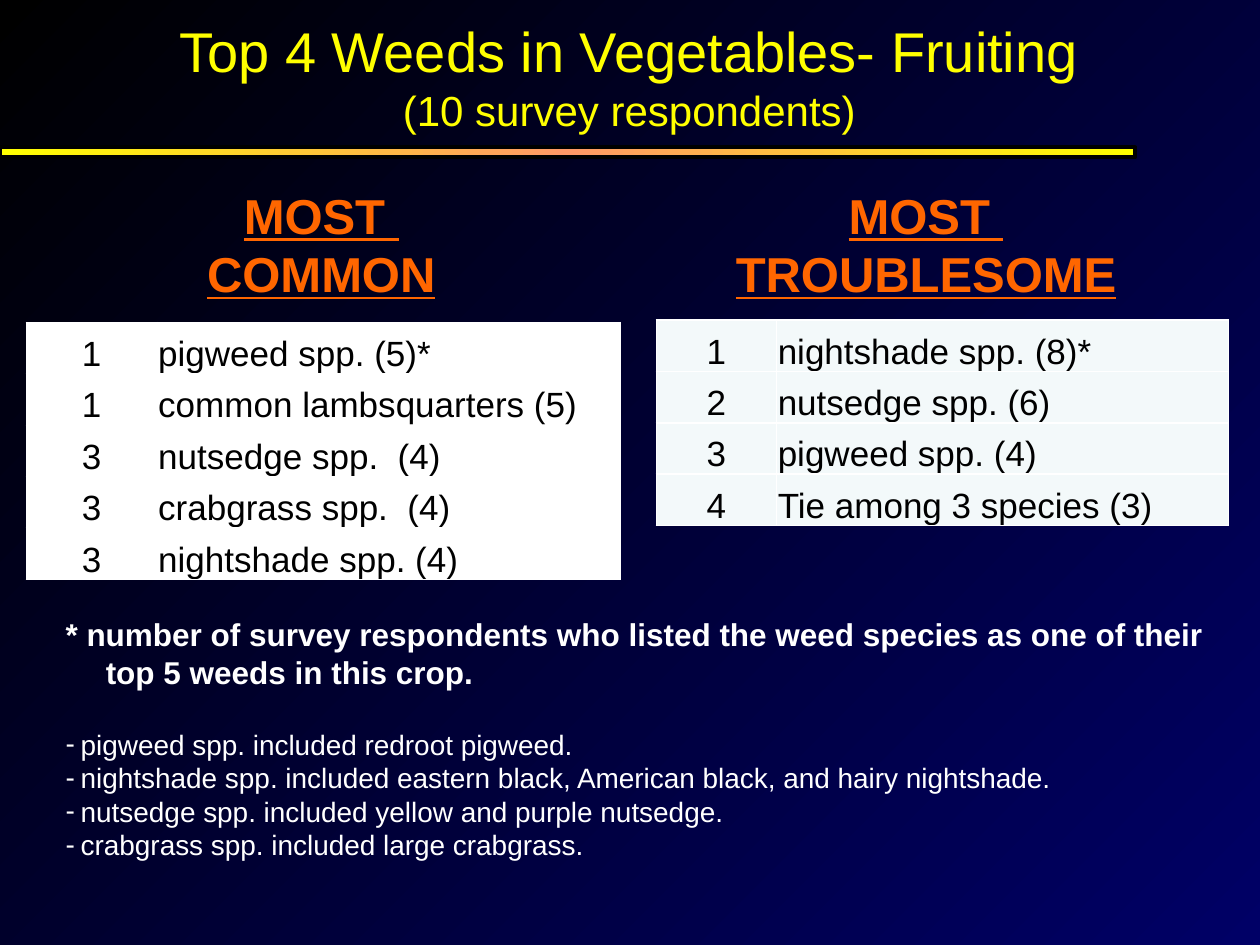
import pptx
import pptx.dml.color
import pptx.enum.text
import pptx.oxml
import pptx.oxml.ns
import pptx.util
from lxml import etree

ALIGN = pptx.enum.text.PP_ALIGN
ANCHOR = pptx.enum.text.MSO_ANCHOR
qn = pptx.oxml.ns.qn

deck = pptx.Presentation()
deck.slide_width = pptx.util.Inches(10)
deck.slide_height = pptx.util.Inches(7.5)


def area(left, top, width, height):
    """Turn percentages of the slide's size into a box in EMU."""
    across, down = deck.slide_width / 100, deck.slide_height / 100
    return (round(left * across), round(top * down),
            round(width * across), round(height * down))


def move(shape, box):
    shape.left, shape.top, shape.width, shape.height = box


def colour(value):
    return pptx.dml.color.RGBColor.from_string(value)


def add_span(para, text, size, hue, bold=False, underline=False):
    span = para.add_run()
    span.text = text
    font = span.font
    font.name = "Arial"
    font.size = pptx.util.Pt(size)
    font.bold = bold
    font.underline = underline
    font.color.rgb = colour(hue)


def next_para(frame, index):
    return frame.paragraphs[0] if index == 0 else frame.add_paragraph()


def set_gradient(fill, owner, hues, angle):
    """Spread hues evenly along a clockwise angle; owner is the XML holding the fill."""
    fill.gradient()
    fill.gradient_angle = -angle % 360
    stops = owner.find(".//" + qn("a:gsLst"))
    for stop in list(stops):
        stops.remove(stop)
    for index, hue in enumerate(hues):
        position = round(100000 * index / (len(hues) - 1))
        stop = etree.SubElement(stops, qn("a:gs"), pos=str(position))
        etree.SubElement(stop, qn("a:srgbClr"), val=hue)


def add_title(slide, box, lines):
    title = slide.shapes.title
    move(title, box)
    frame = title.text_frame
    frame.auto_size = pptx.enum.text.MSO_AUTO_SIZE.NONE
    frame.vertical_anchor = ANCHOR.MIDDLE
    for index, (text, size) in enumerate(lines):
        para = next_para(frame, index)
        para.alignment = ALIGN.CENTER
        add_span(para, text, size, "FFFF00")


def add_rule(slide, box):
    rule = slide.shapes.add_shape(pptx.enum.shapes.MSO_SHAPE.RECTANGLE, *box)
    rule.shadow.inherit = False
    set_gradient(rule.fill, rule.element, ["FFFF00", "FF9966", "FFFF00"], 0)
    rule.line.color.rgb = colour("000000")
    rule.line.width = pptx.util.Pt(2.25)


def add_heading(slide, box, lines):
    frame = slide.shapes.add_textbox(*box).text_frame
    frame.word_wrap = True
    for index, text in enumerate(lines):
        para = next_para(frame, index)
        para.alignment = ALIGN.CENTER
        add_span(para, text, 28, "FF6600", bold=True, underline=True)


def set_borders(cell, hue):
    properties = cell._tc.get_or_add_tcPr()
    for index, side in enumerate(("a:lnL", "a:lnR", "a:lnT", "a:lnB")):
        line = etree.Element(qn(side), w=str(pptx.util.Pt(1)))
        solid = etree.SubElement(line, qn("a:solidFill"))
        etree.SubElement(solid, qn("a:srgbClr"), val=hue)
        properties.insert(index, line)


def add_ranking(slide, box, rank_share, rows, fill):
    table = slide.shapes.add_table(len(rows), 2, *box).table
    table.first_row = table.horz_banding = False
    table.columns[0].width = round(box[2] * rank_share)
    table.columns[1].width = box[2] - table.columns[0].width
    inset = pptx.util.Inches(0.01)
    for row, texts in enumerate(rows):
        for column, text in enumerate(texts):
            cell = table.cell(row, column)
            cell.fill.solid()
            cell.fill.fore_color.rgb = colour(fill)
            cell.vertical_anchor = ANCHOR.BOTTOM
            cell.margin_left = cell.margin_right = cell.margin_top = inset
            cell.margin_bottom = 0
            set_borders(cell, "FFFFFF")
            para = cell.text_frame.paragraphs[0]
            para.alignment = ALIGN.LEFT if column else ALIGN.CENTER
            add_span(para, text, 20, "000000")


def set_indent(para, inches, bullet=None):
    """Hang the paragraph by the given inches, with a bullet or none."""
    properties = para._p.get_or_add_pPr()
    hang = pptx.util.Inches(inches)
    properties.set("marL", str(hang))
    properties.set("indent", str(-hang))
    if bullet:
        etree.SubElement(properties, qn("a:buChar"), char=bullet)
    else:
        etree.SubElement(properties, qn("a:buNone"))


def add_notes(slide, box, remark, items):
    body = slide.placeholders[1]
    move(body, box)
    frame = body.text_frame
    frame.auto_size = pptx.enum.text.MSO_AUTO_SIZE.NONE
    for index, text in enumerate([remark] + items):
        para = next_para(frame, index)
        para.space_before = pptx.util.Pt(21 if index == 1 else 0)
        if index == 0:
            set_indent(para, 0.25)
            add_span(para, text, 18, "FFFFFF", bold=True)
        else:
            set_indent(para, 0.12, "-")
            add_span(para, text, 16, "FFFFFF")


def build_slide():
    page = deck.slides.add_slide(deck.slide_layouts[1])
    set_gradient(page.background.fill, page.element, ["000000", "000066"], 45)
    add_rule(page, area(0, 15.6, 90.1, 1.07))
    add_heading(page, area(13.5, 18.93, 24, 13.87), ["MOST ", "COMMON"])
    add_heading(page, area(56.5, 18.93, 34, 13.87), ["MOST ", "TROUBLESOME"])
    row = 5.44
    common = [("1", "pigweed spp. (5)*"), ("1", "common lambsquarters (5)"),
              ("3", "nutsedge spp.  (4)"), ("3", "crabgrass spp.  (4)"),
              ("3", "nightshade spp. (4)")]
    troublesome = [("1", "nightshade spp. (8)*"), ("2", "nutsedge spp. (6)"),
                   ("3", "pigweed spp. (4)"), ("4", "Tie among 3 species (3)")]
    add_ranking(page, area(2.1, 34.13, 47.1, row * len(common)),
                0.22, common, "FFFFFF")
    add_ranking(page, area(52.1, 33.87, 45.4, row * len(troublesome)),
                0.21, troublesome, "F3F9FA")
    add_title(page, area(3.3, 0, 93.3, 16),
              [("Top 4 Weeds in Vegetables- Fruiting", 32),
               ("(10 survey respondents)", 24)])
    add_notes(page, area(4.2, 64.4, 92.5, 27.87),
              "* number of survey respondents who listed the weed species "
              "as one of their  top 5 weeds in this crop.",
              ["pigweed spp. included redroot pigweed.",
               "nightshade spp. included eastern black, American black, "
               "and hairy nightshade.",
               "nutsedge spp. included yellow and purple nutsedge.",
               "crabgrass spp. included large crabgrass."])


if __name__ == "__main__":
    import pptx.enum.shapes
    build_slide()
    deck.save("out.pptx")
